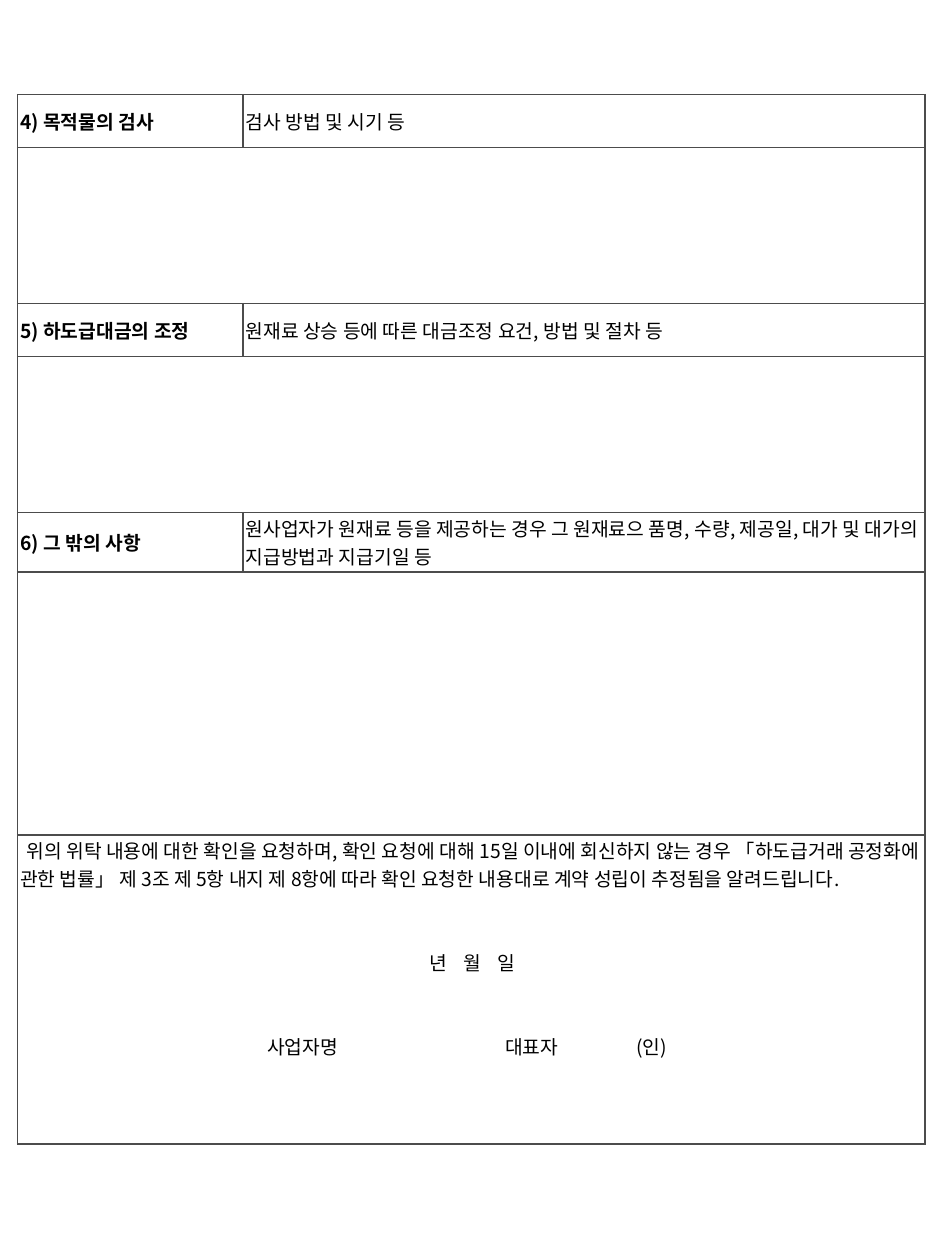
from lxml import etree
from pptx import Presentation
from pptx.dml.color import RGBColor
from pptx.enum.text import MSO_ANCHOR
from pptx.oxml.ns import qn
from pptx.util import Inches, Pt

TOP, MIDDLE = MSO_ANCHOR.TOP, MSO_ANCHOR.MIDDLE
BLACK = RGBColor(0x00, 0x00, 0x00)
WHITE = RGBColor(0xFF, 0xFF, 0xFF)
BORDER = RGBColor(0x4C, 0x4C, 0x4C)

COLUMNS = [1.79, 5.41]
HEADING_H = 0.42
CLOSING_H = 2.45
# heading, description, heading row height, height of the blank answer row
SECTIONS = [
    ("4) 목적물의 검사", "검사 방법 및 시기 등", HEADING_H, 1.24),
    ("5) 하도급대금의 조정", "원재료 상승 등에 따른 대금조정 요건, 방법 및 절차 등",
     HEADING_H, 1.24),
    ("6) 그 밖의 사항",
     "원사업자가 원재료 등을 제공하는 경우 그 원재료으 품명, 수량, 제공일, "
     "대가 및 대가의 지급방법과 지급기일 등", 0.47, 2.09),
]
NOTICE = ("위의 위탁 내용에 대한 확인을 요청하며, 확인 요청에 대해 15일 이내에 "
          "회신하지 않는 경우 「하도급거래 공정화에 관한 법률」 제 3조 제 5항 내지 "
          "제 8항에 따라 확인 요청한 내용대로 계약 성립이 추정됨을 알려드립니다.")
# text fields of a line and the tab stop where each begins
SIGNING_LINES = [
    (["년", "월", "일"], [3.25, 3.52, 3.79]),
    (["사업자명", "대표자", "(인)"], [1.96, 3.85, 4.89]),
]


class Form:
    def __init__(self, slide, font="Noto Sans CJK KR", size=11):
        self.slide, self.font, self.size = slide, font, size

    def table(self, left, top, columns, rows):
        shape = self.slide.shapes.add_table(
            len(rows), len(columns), Inches(left), Inches(top),
            Inches(sum(columns)), Inches(sum(rows)))
        table = shape.table
        for column, width in zip(table.columns, columns):
            column.width = Inches(width)
        for row, height in zip(table.rows, rows):
            row.height = Inches(height)
        for cell in table.iter_cells():
            self.style_cell(cell)
        return table

    def style_cell(self, cell):
        cell.margin_left = cell.margin_right = Inches(0.02)
        cell.margin_top = cell.margin_bottom = Inches(0.01)
        cell.vertical_anchor = MIDDLE
        tc_pr = cell._tc.get_or_add_tcPr()
        for side in ("a:lnL", "a:lnR", "a:lnT", "a:lnB"):
            ln = etree.SubElement(tc_pr, qn(side), w=str(Pt(1)))
            fill = etree.SubElement(ln, qn("a:solidFill"))
            etree.SubElement(fill, qn("a:srgbClr"), val=str(BORDER))
        cell.fill.solid()
        cell.fill.fore_color.rgb = WHITE

    def set_text(self, p, text, bold=False):
        p.text = text
        for r in p.runs:
            r.font.name = self.font
            r.font.size = Pt(self.size)
            r.font.bold = bold
            r.font.color.rgb = BLACK
            etree.SubElement(r.font._element, qn("a:ea"), typeface=self.font)

    def tabbed_line(self, tf, fields, stops, space_before):
        """Add a line whose fields each start at their own tab stop."""
        p = tf.add_paragraph()
        tabs = etree.SubElement(p._p.get_or_add_pPr(), qn("a:tabLst"))
        for stop in stops:
            etree.SubElement(tabs, qn("a:tab"), pos=str(Inches(stop)), algn="l")
        p.space_before = Pt(space_before)
        self.set_text(p, "".join("\t" + field for field in fields))


def main():
    prs = Presentation()
    prs.slide_width, prs.slide_height = Inches(7.5), Inches(10)
    form = Form(prs.slides.add_slide(prs.slide_layouts[6]))

    rows = [h for section in SECTIONS for h in section[2:]] + [CLOSING_H]
    table = form.table(0.14, 0.75, COLUMNS, rows)
    for i, (heading, description, *_) in enumerate(SECTIONS):
        row = 2 * i
        form.set_text(table.cell(row, 0).text_frame.paragraphs[0], heading, bold=True)
        form.set_text(table.cell(row, 1).text_frame.paragraphs[0], description)
        table.cell(row + 1, 0).merge(table.cell(row + 1, 1))

    last = len(rows) - 1
    closing = table.cell(last, 0)
    closing.merge(table.cell(last, 1))
    closing.vertical_anchor = TOP
    tf = closing.text_frame
    notice = tf.paragraphs[0]
    notice._p.get_or_add_pPr().set("indent", str(Inches(0.05)))
    form.set_text(notice, NOTICE)
    for fields, stops in SIGNING_LINES:
        form.tabbed_line(tf, fields, stops, space_before=32)

    prs.save("out.pptx")


if __name__ == "__main__":
    main()
